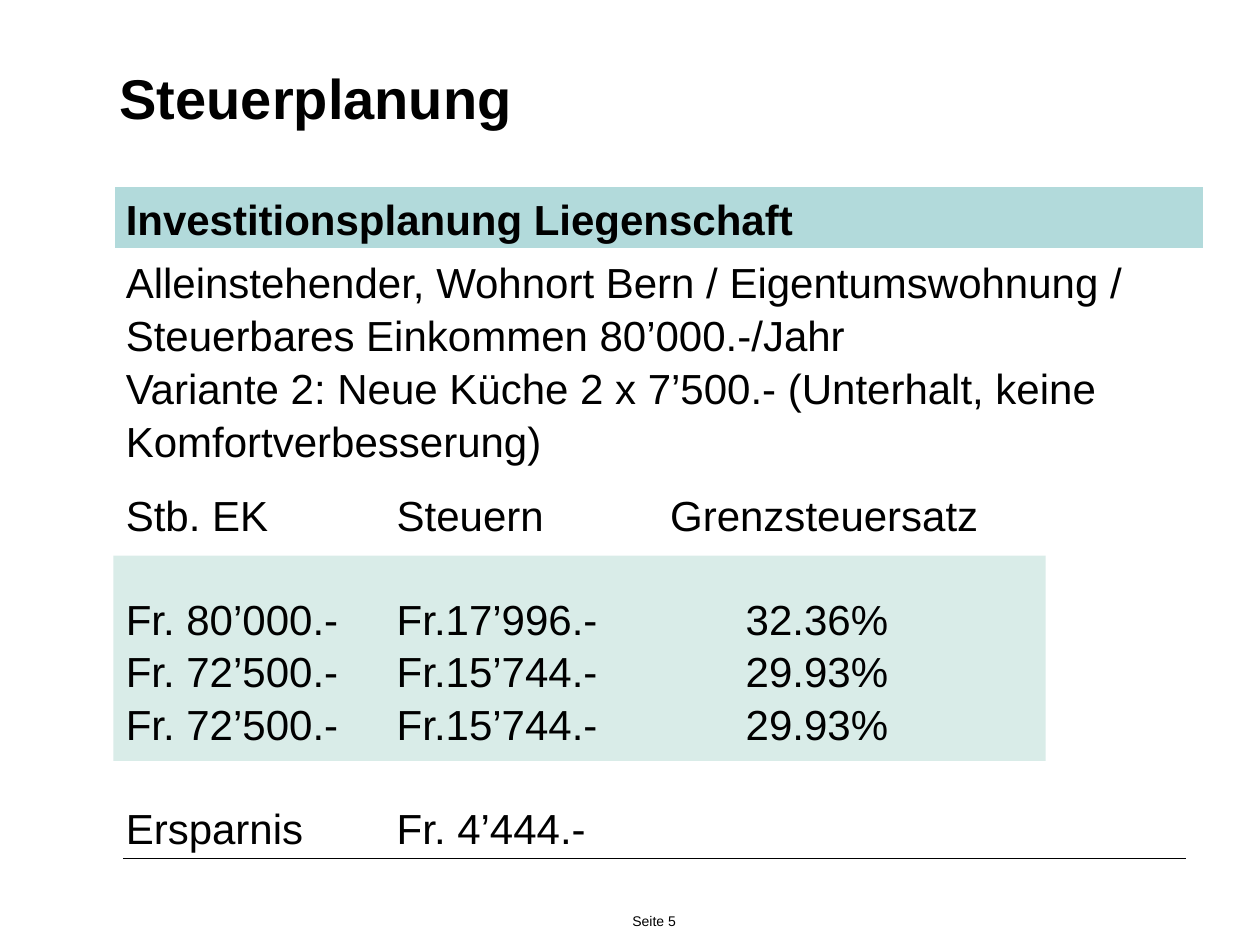
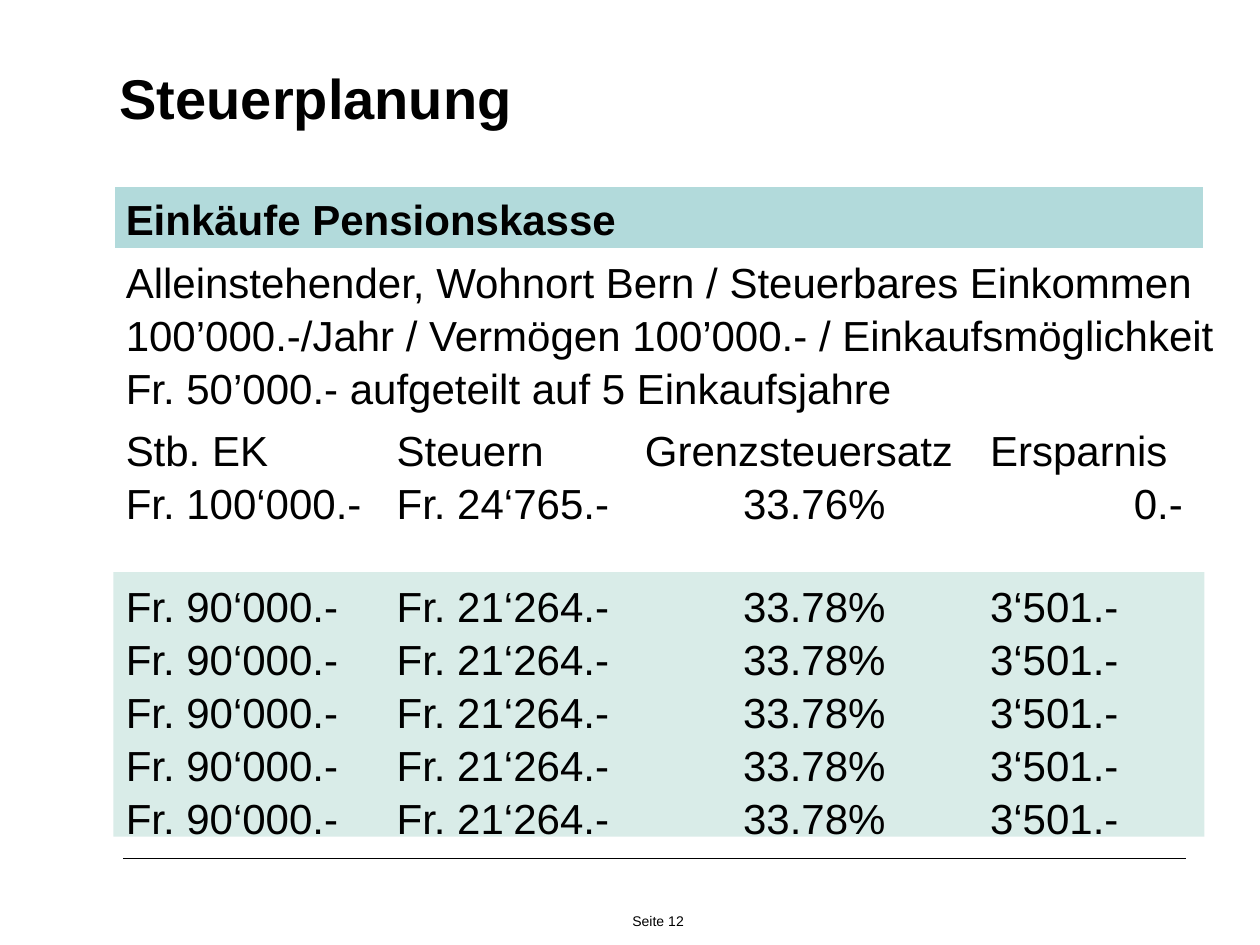
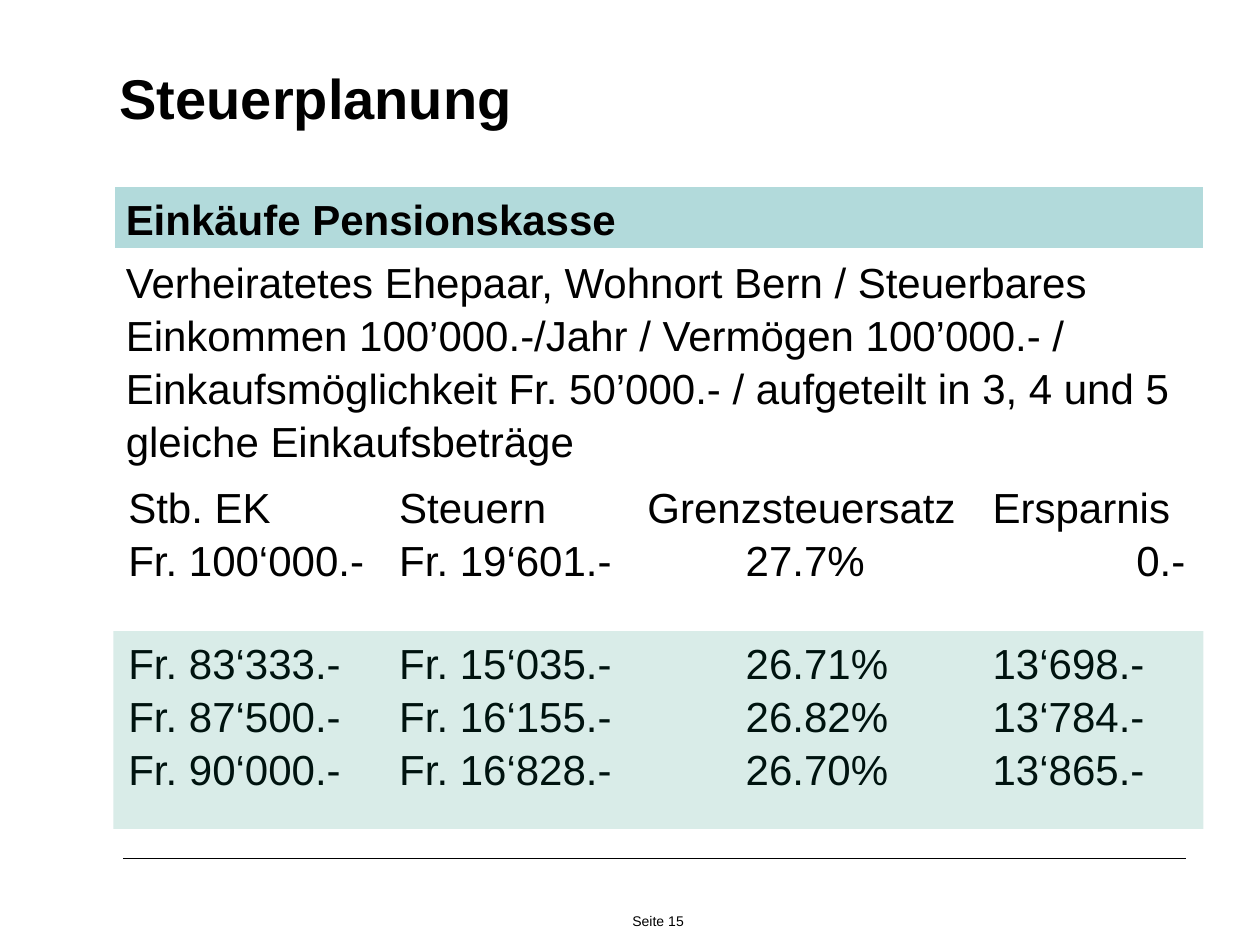
from dataclasses import dataclass

from pptx import Presentation
from pptx.dml.color import RGBColor
from pptx.enum.shapes import MSO_CONNECTOR, MSO_SHAPE
from pptx.enum.text import MSO_ANCHOR, PP_ALIGN
from pptx.oxml.ns import qn
from pptx.oxml.xmlchemy import OxmlElement
from pptx.util import Emu, Pt

RECTANGLE = MSO_SHAPE.RECTANGLE
STRAIGHT = MSO_CONNECTOR.STRAIGHT
TOP = MSO_ANCHOR.TOP
LEFT = PP_ALIGN.LEFT
EMU_PER_PX = 9144
BLANK_LAYOUT = 6


@dataclass(frozen=True)
class Theme:
    """Colours, fonts and type sizes shared by all slides."""
    font: str = "Arial"
    ink: RGBColor = RGBColor(0x00, 0x00, 0x00)
    paper: RGBColor = RGBColor(0xFF, 0xFF, 0xFF)
    band: RGBColor = RGBColor(0xB2, 0xDA, 0xDB)
    highlight: RGBColor = RGBColor(0x00, 0x83, 0x6A)
    highlight_alpha: int = 15
    title_size: int = 32
    body_size: int = 24
    footer_size: int = 8
    line_spacing: float = 1.05
    small_gap: int = 12
    row_gap: int = 29


THEME = Theme()


@dataclass(frozen=True)
class Box:
    """Position and size in px."""
    left: int
    top: int
    width: int
    height: int


@dataclass(frozen=True)
class Row:
    """Cells of one text line, their tab stops in px and the gap above in points."""
    cells: tuple[str, ...]
    stops: tuple[int, ...] = ()
    gap: int = 0


@dataclass(frozen=True)
class TextBlock:
    """Rows of text placed in a box."""
    box: Box
    rows: tuple[Row, ...]


@dataclass(frozen=True)
class TaxSlide:
    """Content of one tax planning slide."""
    page: int
    topic: str
    highlight: Box
    blocks: tuple[TextBlock, ...]
    highlight_in_front: bool = False


TITLE = Box(95, 48, 850, 161)
TOPIC = Box(90, 147, 866, 51)
FOOTER = Box(492, 719, 75, 31)
RULE = Box(98, 681, 843, 0)

INVESTMENT_HEADS = (215, 432)
INVESTMENT_FIGURES = (215, 492)
PENSION_HEADS = (215, 412, 686)
PENSION_FIGURES = (215, 490, 686)
PENSION_START = (215, 490, 800)


def pension_rows(start: tuple[str, ...], purchases: list[tuple[str, ...]]) -> tuple[Row, ...]:
    """Return the heads, the starting row and the purchase rows of a pension listing."""
    heads = Row(("Stb. EK", "Steuern", "Grenzsteuersatz", "Ersparnis"), PENSION_HEADS)
    figures = (
        Row(cells, PENSION_FIGURES, 0 if index else THEME.row_gap)
        for index, cells in enumerate(purchases)
    )
    return (heads, Row(start, PENSION_START), *figures)


SLIDES = (
    TaxSlide(5, "Investitionsplanung Liegenschaft", Box(90, 441, 740, 163), (
        TextBlock(Box(90, 197, 921, 552), (
            Row(("Alleinstehender, Wohnort Bern / Eigentumswohnung / "
                 "Steuerbares Einkommen 80’000.-/Jahr",)),
            Row(("Variante 2: Neue Küche 2 x 7’500.- (Unterhalt, keine "
                 "Komfortverbesserung)",)),
            Row(("Stb. EK", "Steuern", "Grenzsteuersatz"), INVESTMENT_HEADS, THEME.small_gap),
            Row(("Fr. 80’000.-", "Fr.17’996.-", "32.36%"), INVESTMENT_FIGURES, THEME.row_gap),
            *[Row(("Fr. 72’500.-", "Fr.15’744.-", "29.93%"), INVESTMENT_FIGURES)] * 2,
            Row(("Ersparnis", "Fr. 4’444.-"), INVESTMENT_FIGURES, THEME.row_gap),
        )),
    )),
    TaxSlide(12, "Einkäufe Pensionskasse", Box(90, 454, 866, 210), (
        TextBlock(Box(90, 330, 866, 374), pension_rows(
            ("Fr. 100‘000.-", "Fr. 24‘765.-", "33.76%", "0.-"),
            [("Fr. 90‘000.-", "Fr. 21‘264.-", "33.78%", "3‘501.-")] * 5,
        )),
        TextBlock(Box(90, 197, 921, 269), (
            Row(("Alleinstehender, Wohnort Bern / Steuerbares Einkommen "
                 "100’000.-/Jahr / Vermögen 100’000.- / Einkaufsmöglichkeit "
                 "Fr. 50’000.- aufgeteilt auf 5 Einkaufsjahre",)),
        )),
    )),
    TaxSlide(15, "Einkäufe Pensionskasse", Box(90, 501, 865, 157), (
        TextBlock(Box(92, 375, 865, 252), pension_rows(
            ("Fr. 100‘000.-", "Fr. 19‘601.-", "27.7%", "0.-"),
            [
                ("Fr. 83‘333.-", "Fr. 15‘035.-", "26.71%", "13‘698.-"),
                ("Fr. 87‘500.-", "Fr. 16‘155.-", "26.82%", "13‘784.-"),
                ("Fr. 90‘000.-", "Fr. 16‘828.-", "26.70%", "13‘865.-"),
            ],
        )),
        TextBlock(Box(90, 197, 921, 212), (
            Row(("Verheiratetes Ehepaar, Wohnort Bern / Steuerbares "
                 "Einkommen 100’000.-/Jahr / Vermögen 100’000.- / "
                 "Einkaufsmöglichkeit Fr. 50’000.- / aufgeteilt in 3, 4 und 5 "
                 "gleiche Einkaufsbeträge",)),
        )),
    ), highlight_in_front=True),
)


def px(length: int) -> Emu:
    """Turn px into EMU."""
    return Emu(length * EMU_PER_PX)


def place(box: Box) -> tuple[Emu, Emu, Emu, Emu]:
    """Return a box as left, top, width and height in EMU."""
    return px(box.left), px(box.top), px(box.width), px(box.height)


def set_stops(paragraph, stops: tuple[int, ...]) -> None:
    """Give a paragraph left tab stops."""
    if not stops:
        return
    tab_list = OxmlElement("a:tabLst")
    for stop in stops:
        tab = OxmlElement("a:tab")
        tab.set("pos", str(px(stop)))
        tab.set("algn", "l")
        tab_list.append(tab)
    paragraph._p.get_or_add_pPr().append(tab_list)


def write(frame, rows: tuple[Row, ...], size: int, bold: bool = False,
          spacing: float = THEME.line_spacing) -> None:
    """Write rows into a text frame, one paragraph each."""
    frame.word_wrap = True
    frame.vertical_anchor = TOP
    for index, row in enumerate(rows):
        paragraph = frame.add_paragraph() if index else frame.paragraphs[0]
        set_stops(paragraph, row.stops)
        paragraph.alignment = LEFT
        paragraph.line_spacing = spacing
        paragraph.space_before = Pt(row.gap)
        run = paragraph.add_run()
        run.text = "\t".join(row.cells)
        run.font.name = THEME.font
        run.font.size = Pt(size)
        run.font.bold = bold
        run.font.color.rgb = THEME.ink


def add_rectangle(slide, box: Box, colour: RGBColor):
    """Add a filled rectangle without shadow or line."""
    rectangle = slide.shapes.add_shape(RECTANGLE, *place(box))
    rectangle.shadow.inherit = False
    rectangle.fill.solid()
    rectangle.fill.fore_color.rgb = colour
    rectangle.line.fill.background()
    return rectangle


def add_highlight(slide, box: Box) -> None:
    """Add the translucent area that marks the main figures."""
    area = add_rectangle(slide, box, THEME.highlight)
    alpha = OxmlElement("a:alpha")
    alpha.set("val", str(THEME.highlight_alpha * 1000))
    area.element.spPr.find(qn("a:solidFill")).find(qn("a:srgbClr")).append(alpha)


def add_rule(slide) -> None:
    """Add the thin line above the footer."""
    rule = slide.shapes.add_connector(
        STRAIGHT, px(RULE.left), px(RULE.top), px(RULE.left + RULE.width), px(RULE.top))
    rule.line.color.rgb = THEME.ink
    rule.line.width = Pt(0.3)
    rule.element.spPr.append(OxmlElement("a:effectLst"))


def add_frame(slide, tax_slide: TaxSlide) -> None:
    """Add the footer, title and topic band."""
    footer = slide.shapes.add_textbox(*place(FOOTER)).text_frame
    write(footer, (Row((f"Seite {tax_slide.page}",)),), THEME.footer_size, spacing=1.0)

    title = slide.shapes.add_textbox(*place(TITLE)).text_frame
    title.margin_left = title.margin_top = title.margin_right = title.margin_bottom = 0
    write(title, (Row(("Steuerplanung",)),), THEME.title_size, bold=True)

    topic = add_rectangle(slide, TOPIC, THEME.band)
    topic.line.color.rgb = THEME.paper
    topic.line.width = Pt(2)
    write(topic.text_frame, (Row((tax_slide.topic,)),), THEME.body_size, bold=True)


def build_slide(presentation, tax_slide: TaxSlide) -> None:
    """Build one tax planning slide."""
    slide = presentation.slides.add_slide(presentation.slide_layouts[BLANK_LAYOUT])
    add_rule(slide)
    if not tax_slide.highlight_in_front:
        add_highlight(slide, tax_slide.highlight)
    for block in tax_slide.blocks:
        frame = slide.shapes.add_textbox(*place(block.box)).text_frame
        write(frame, block.rows, THEME.body_size)
    if tax_slide.highlight_in_front:
        add_highlight(slide, tax_slide.highlight)
    add_frame(slide, tax_slide)


def main() -> None:
    """Build and save the presentation."""
    presentation = Presentation()
    presentation.slide_width = px(1000)
    presentation.slide_height = px(750)
    for tax_slide in SLIDES:
        build_slide(presentation, tax_slide)
    presentation.save("out.pptx")


if __name__ == "__main__":
    main()
